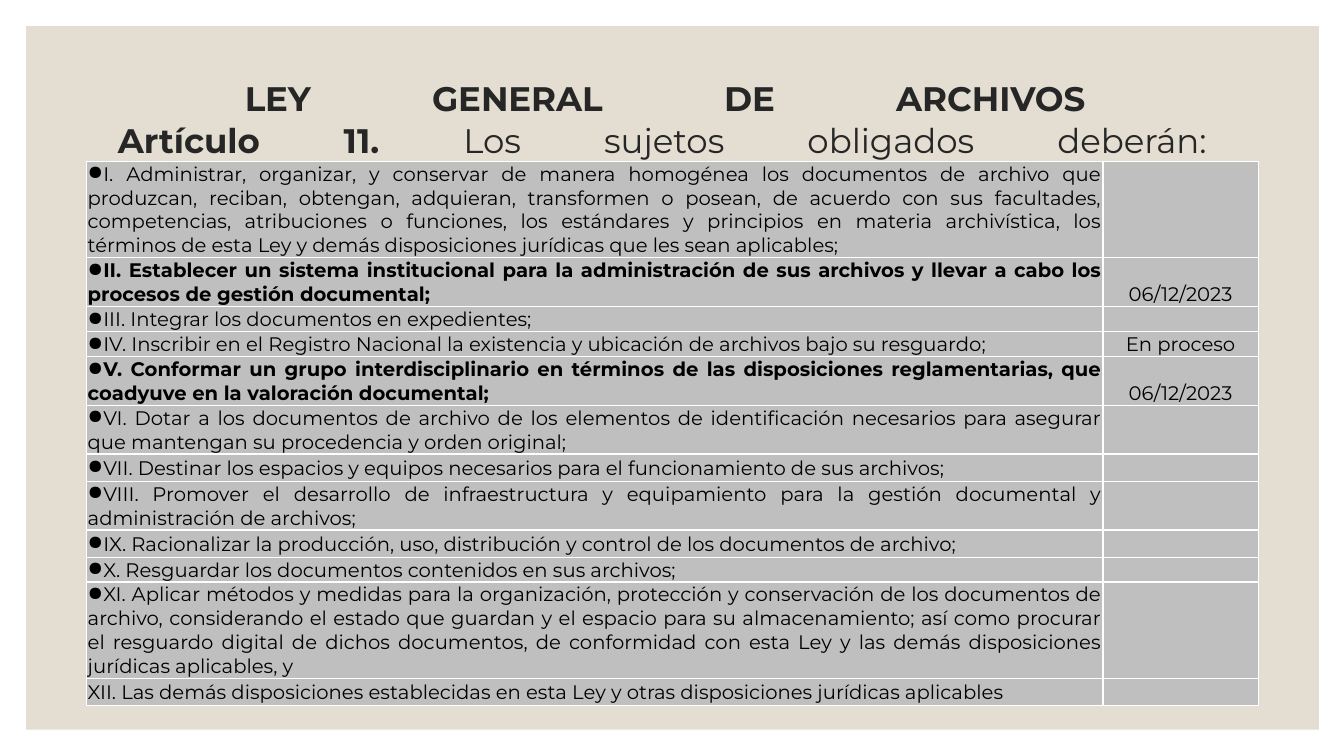
from lxml import etree
from pptx import Presentation
from pptx.dml.color import RGBColor
from pptx.enum.shapes import MSO_SHAPE
from pptx.enum.text import MSO_ANCHOR, MSO_AUTO_SIZE, PP_ALIGN
from pptx.oxml.ns import qn
from pptx.util import Inches, Pt

RECT = MSO_SHAPE.RECTANGLE
MIDDLE, BOTTOM = MSO_ANCHOR.MIDDLE, MSO_ANCHOR.BOTTOM
JUSTIFY, CENTER = PP_ALIGN.JUSTIFY, PP_ALIGN.CENTER
FONT = "Montserrat"
TITLE_SIZE, SPACER_SIZE, CELL_SIZE = 24.3, 43.2, 14
COLUMNS = [10.08, 1.54]

# Minimum row height, duty, status, bold
DUTIES = [
    (0.81, "I. Administrar, organizar, y conservar de manera homogénea los documentos de archivo que produzcan, "
     "reciban, obtengan, adquieran, transformen o posean, de acuerdo con sus facultades, competencias, "
     "atribuciones o funciones, los estándares y principios en materia archivística, los términos de esta Ley "
     "y demás disposiciones jurídicas que les sean aplicables;", "", False),
    (0.27, "II. Establecer un sistema institucional para la administración de sus archivos y llevar a cabo los "
     "procesos de gestión documental;", "06/12/2023", True),
    (0.15, "III. Integrar los documentos en expedientes;", "", False),
    (0.25, "IV. Inscribir en el Registro Nacional la existencia y ubicación de archivos bajo su resguardo;",
     "En proceso", False),
    (0.4, "V. Conformar un grupo interdisciplinario en términos de las disposiciones reglamentarias, que "
     "coadyuve en la valoración documental;", "06/12/2023", True),
    (0.4, "VI. Dotar a los documentos de archivo de los elementos de identificación necesarios para asegurar "
     "que mantengan su procedencia y orden original;", "", False),
    (0.27, "VII. Destinar los espacios y equipos necesarios para el funcionamiento de sus archivos;", "", False),
    (0.27, "VIII. Promover el desarrollo de infraestructura y equipamiento para la gestión documental y "
     "administración de archivos;", "", False),
    (0.27, "IX. Racionalizar la producción, uso, distribución y control de los documentos de archivo;", "", False),
    (0.15, "X. Resguardar los documentos contenidos en sus archivos;", "", False),
    (0.81, "XI. Aplicar métodos y medidas para la organización, protección y conservación de los documentos de "
     "archivo, considerando el estado que guardan y el espacio para su almacenamiento; así como procurar el "
     "resguardo digital de dichos documentos, de conformidad con esta Ley y las demás disposiciones jurídicas "
     "aplicables, y", "", False),
    (0.27, "XII. Las demás disposiciones establecidas en esta Ley y otras disposiciones jurídicas aplicables",
     "", False),
]


def rgb(value):
    return RGBColor.from_string(value)


def style(font, size, color, bold=False, name=FONT):
    font.name, font.size, font.bold = name, Pt(size), bold
    font.color.rgb = rgb(color)


def add_mark(p, tag, size):
    """Add a line break or paragraph end with its own text size."""
    mark = etree.SubElement(p._p, qn(tag))
    props = etree.SubElement(mark, qn("a:rPr")) if tag == "a:br" else mark
    props.set("sz", str(round(size * 100)))
    etree.SubElement(props, qn("a:latin")).set("typeface", FONT)


def add_bullet(p):
    props = p._p.get_or_add_pPr()
    props.set("marL", "0")
    props.set("indent", "0")
    color = etree.SubElement(props, qn("a:buClr"))
    etree.SubElement(color, qn("a:srgbClr")).set("val", "000000")
    etree.SubElement(props, qn("a:buChar")).set("char", "●")


def add_borders(cell):
    props = cell._tc.get_or_add_tcPr()
    for side in "LRTB":
        line = etree.SubElement(props, qn(f"a:ln{side}"), w=str(Pt(1)))
        fill = etree.SubElement(line, qn("a:solidFill"))
        etree.SubElement(fill, qn("a:srgbClr")).set("val", "FFFFFF")


def add_panel(s, x, y, w, h):
    panel = s.shapes.add_shape(RECT, Inches(x), Inches(y), Inches(w), Inches(h))
    panel.shadow.inherit = False
    panel.fill.solid()
    panel.fill.fore_color.rgb = rgb("E3DED1")
    panel.line.fill.background()
    s.shapes._spTree.insert(2, panel._element)  # behind the title


def add_title(s, x, y, w, h):
    title = s.shapes.title
    title.left, title.top, title.width, title.height = map(Inches, (x, y, w, h))
    tf = title.text_frame
    tf.word_wrap, tf.auto_size = True, MSO_AUTO_SIZE.NONE
    tf.vertical_anchor = MIDDLE
    p = tf.paragraphs[0]
    p.alignment, p.line_spacing = JUSTIFY, 0.9

    def add_run(text, size, bold, name=FONT):
        r = p.add_run()
        r.text = text
        style(r.font, size, "262626", bold, name)

    add_mark(p, "a:br", SPACER_SIZE)
    add_run(" ", SPACER_SIZE, False, "League Spartan")
    add_run("LEY GENERAL DE ARCHIVOS ", TITLE_SIZE, True)
    add_mark(p, "a:br", TITLE_SIZE)
    add_run("Artículo 11. ", TITLE_SIZE, True)
    add_run("Los sujetos obligados deberán:", TITLE_SIZE, False)
    add_mark(p, "a:br", TITLE_SIZE)
    add_mark(p, "a:endParaRPr", TITLE_SIZE)


def fill_cell(cell, text, align, anchor, bold=False, bullet=False):
    cell.margin_left = cell.margin_right = cell.margin_top = Inches(0.01)
    cell.margin_bottom = 0
    cell.vertical_anchor = anchor
    add_borders(cell)
    cell.fill.solid()
    cell.fill.fore_color.rgb = rgb("BFBFBF")
    p = cell.text_frame.paragraphs[0]
    p.alignment = align
    if bullet:
        add_bullet(p)
    if text:
        p.text = text
        style(p.font, CELL_SIZE, "000000", bold)
    else:
        add_mark(p, "a:endParaRPr", CELL_SIZE)


def add_duties(s, x, y, w, h):
    frame = s.shapes.add_table(len(DUTIES), len(COLUMNS), Inches(x), Inches(y), Inches(w), Inches(h))
    table = frame.table
    table.first_row = table.horz_banding = False
    for column, width in zip(table.columns, COLUMNS):
        column.width = Inches(width)
    for i, (height, duty, status, bold) in enumerate(DUTIES):
        table.rows[i].height = Inches(height)
        is_last = i == len(DUTIES) - 1
        fill_cell(table.cell(i, 0), duty, JUSTIFY, MIDDLE, bold, bullet=not is_last)
        fill_cell(table.cell(i, 1), status, CENTER, BOTTOM)


def main():
    prs = Presentation()
    prs.slide_width, prs.slide_height = Inches(13.33), Inches(7.5)
    s = prs.slides.add_slide(prs.slide_layouts[5])
    add_panel(s, 0.26, 0.26, 12.82, 6.98)
    add_title(s, 1.07, 0.22, 11, 1.5)
    add_duties(s, 0.86, 1.6, sum(COLUMNS), 5.3)
    prs.save("out.pptx")


if __name__ == "__main__":
    main()
